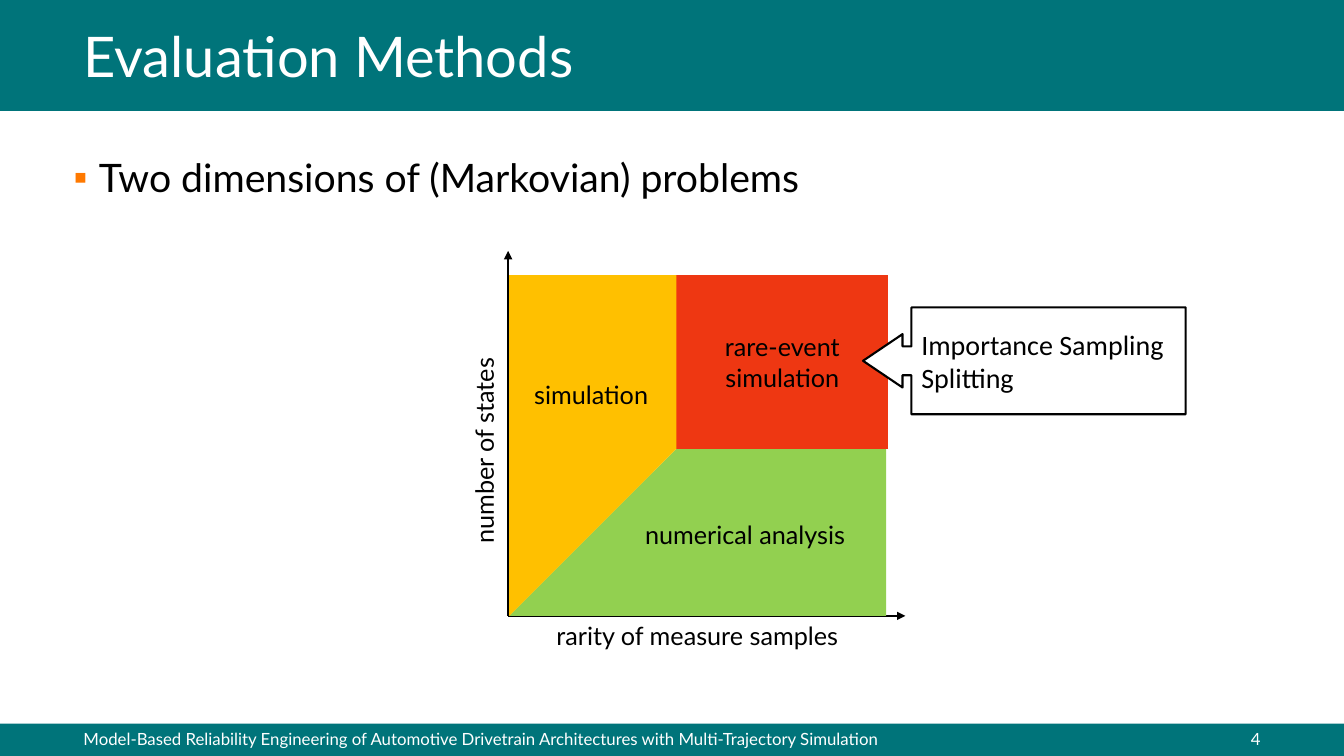
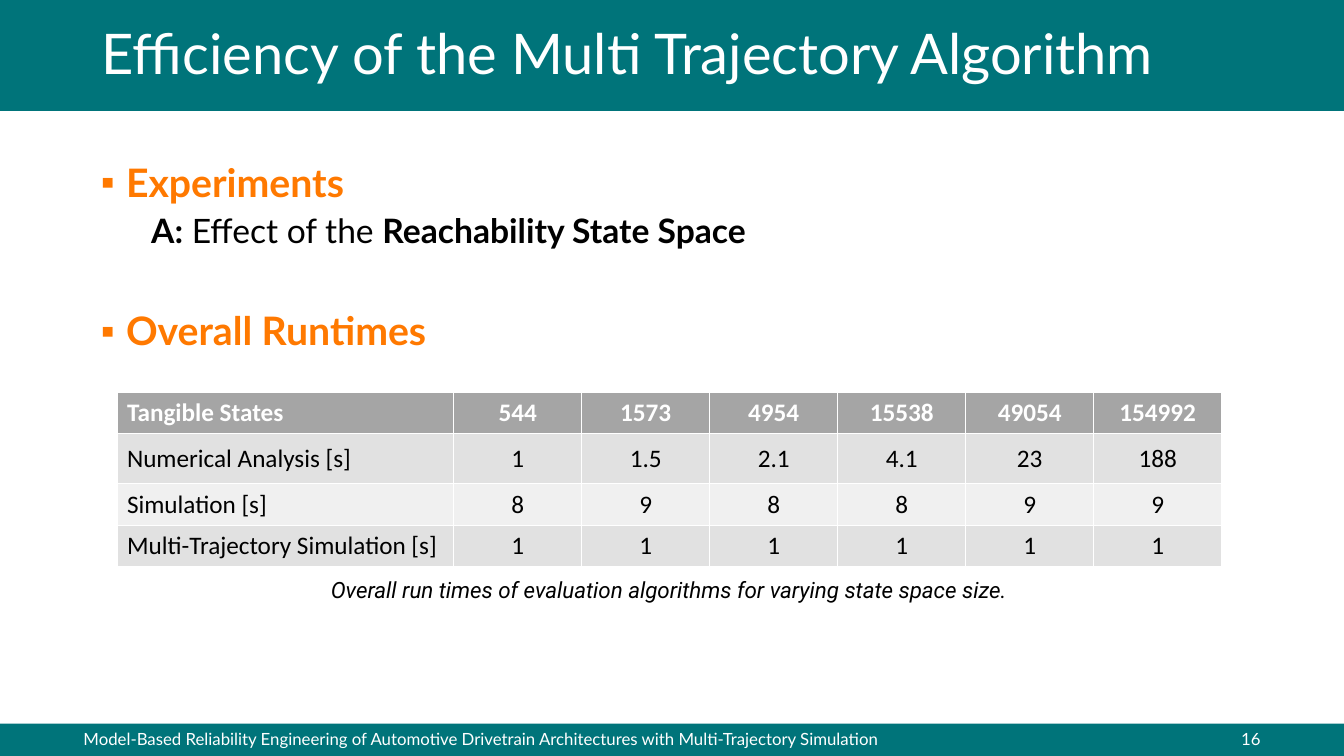
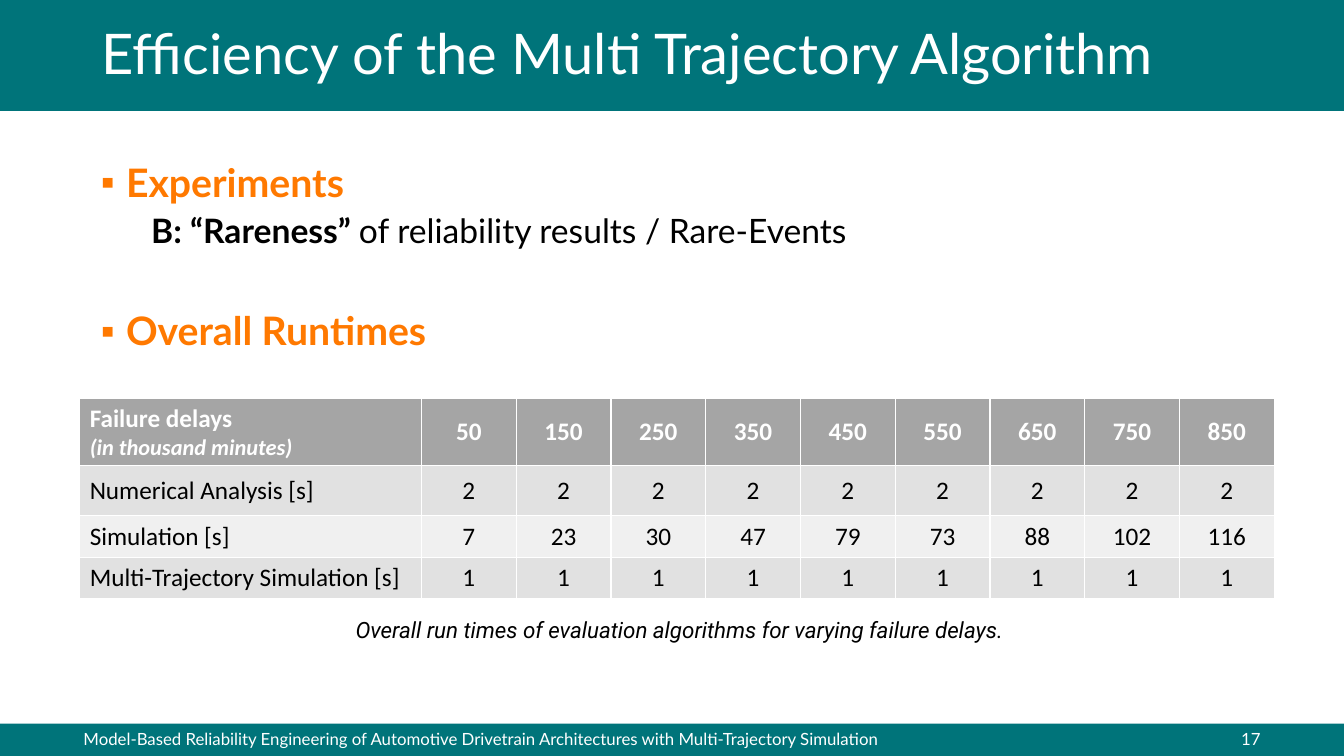
"""Build three slides on evaluation methods and run times of multi-trajectory simulation."""
from lxml import etree
from pptx import Presentation
from pptx import util as u
from pptx.dml.color import RGBColor
from pptx.enum import shapes, text
from pptx.oxml.ns import qn

PX = 9144
WIDTH, HEIGHT = 1333, 750
COLORS = {
    "teal": "00747A", "orange": "FF7900", "white": "FFFFFF", "black": "000000",
    "green": "92D050", "red": "EE3712", "yellow": "FFC000",
    "header": "A5A5A5", "band": "E1E1E1", "light": "F0F0F0",
}
FOOTER = ("Model-Based Reliability Engineering of Automotive Drivetrain Architectures "
          "with Multi-Trajectory Simulation")

BULLET = {"size": 28, "before": 12, "spacing": 0.9, "bullet": "▪", "left": 25, "hang": -25}
HEADING = {**BULLET, "color": "orange", "bold": True}
SUBLINE = {"size": 24, "before": 6, "spacing": 0.9, "level": 1, "left": 50}
BOLD = {"bold": True}

ORIGIN, TOP, RIGHT, MIDDLE = (505, 611), 273, 881, (671, 445)
AXES = [(504, 249), (898, 611)]
REGIONS = [
    ("green", [ORIGIN, MIDDLE, (879, MIDDLE[1]), (879, ORIGIN[1])]),
    ("red", [MIDDLE, (MIDDLE[0], TOP), (RIGHT, TOP), (RIGHT, MIDDLE[1])]),
    ("yellow", [ORIGIN, (ORIGIN[0], TOP), (MIDDLE[0], TOP), MIDDLE]),
]
LABELS = [
    (["rarity of measure samples"], (542, 611, 312, 40), {}),
    (["number of states"], (373, 422, 214, 40), {"rotation": 270}),
    (["numerical analysis"], (630, 510, 227, 40), {}),
    (["rare-event", "simulation"], (706, 324, 140, 71), {"align": "CENTER"}),
    (["simulation"], (520, 371, 139, 40), {}),
]
CALLOUT = ["Importance Sampling", "Splitting"]
CALLOUT_SHAPE = (0.27, 0.25, 0.37, 0.85)

RUNTIME_TITLE = "Efficiency of the Multi Trajectory Algorithm"
RUNTIMES = [
    {
        "number": 16,
        "experiment": [("A:", BOLD), " Effect of the ", ("Reachability State Space", BOLD)],
        "place": (116, 389), "columns": (334, 127), "rows": (41, 50, 41, 41),
        "table": [
            (["Tangible States"], 544, 1573, 4954, 15538, 49054, 154992),
            (["Numerical Analysis [s]"], 1, 1.5, 2.1, 4.1, 23, 188),
            (["Simulation [s]"], 8, 9, 8, 8, 9, 9),
            (["Multi-Trajectory Simulation [s]"], 1, 1, 1, 1, 1, 1),
        ],
        "caption": "Overall run times of evaluation algorithms for varying state space size.",
        "caption_at": (116, 567, 1095, 37),
    },
    {
        "number": 17,
        "experiment": [("B: “Rareness” ", BOLD), "of reliability results / Rare-Events"],
        "place": (79, 395), "columns": (339, 94), "rows": (66, 50, 41, 41),
        "table": [
            (["Failure delays", {"spans": ["(in thousand minutes)"], "size": 16, "italic": True}],
             50, 150, 250, 350, 450, 550, 650, 750, 850),
            (["Numerical Analysis [s]"], 2, 2, 2, 2, 2, 2, 2, 2, 2),
            (["Simulation [s]"], 7, 23, 30, 47, 79, 73, 88, 102, 116),
            (["Multi-Trajectory Simulation [s]"], 1, 1, 1, 1, 1, 1, 1, 1, 1),
        ],
        "caption": "Overall run times of evaluation algorithms for varying failure delays.",
        "caption_at": (83, 606, 1182, 37),
    },
]


def emu(lengths):
    return [u.Emu(length * PX) for length in lengths]


def rgb(name):
    return RGBColor.from_string(COLORS[name])


def write(frame, paras, **look):
    for index, item in enumerate(paras):
        item = item if isinstance(item, dict) else {"spans": [item]}
        style = {"size": 18, "font": "Lato", "color": "black", "align": "LEFT", **look, **item}
        para = frame.paragraphs[0] if index == 0 else frame.add_paragraph()
        para.alignment = text.PP_ALIGN[style["align"]]
        para.level = style.get("level", 0)
        para.line_spacing = style.get("spacing", 1.0)
        para.space_before = u.Pt(style.get("before", 0))
        set_bullet(para, style)
        for part in style["spans"]:
            words, extra = (part, {}) if isinstance(part, str) else part
            span = para.add_run()
            span.text = words
            font = {**style, **extra}
            span.font.name = font["font"]
            span.font.size = u.Pt(font["size"])
            span.font.bold = font.get("bold", False)
            span.font.italic = font.get("italic", False)
            span.font.color.rgb = rgb(font["color"])


def set_bullet(para, style):
    props = para._p.get_or_add_pPr()
    props.set("marL", str(style.get("left", 0) * PX))
    props.set("indent", str(style.get("hang", 0) * PX))
    if "bullet" in style:
        tint = etree.SubElement(props, qn("a:buClr"))
        etree.SubElement(tint, qn("a:srgbClr"), val=COLORS["orange"])
        etree.SubElement(props, qn("a:buChar"), char=style["bullet"])
    else:
        etree.SubElement(props, qn("a:buNone"))


def add_text(page, paras, place, wrap=True, rotation=0, **look):
    box = page.shapes.add_textbox(*emu(place))
    box.rotation = rotation
    box.text_frame.word_wrap = wrap
    if not wrap:
        box.text_frame.auto_size = text.MSO_AUTO_SIZE.SHAPE_TO_FIT_TEXT
    write(box.text_frame, paras, **look)
    return box


def paint(shape, fill, line=None):
    shape.shadow.inherit = False
    shape.fill.solid()
    shape.fill.fore_color.rgb = rgb(fill)
    if line:
        shape.line.color.rgb = rgb(line)
        shape.line.width = u.Pt(1.5)
    else:
        shape.line.fill.background()
    return shape


def fill_placeholder(holder, place, paras, anchor, **look):
    holder.left, holder.top, holder.width, holder.height = emu(place)
    holder.text_frame.auto_size = text.MSO_AUTO_SIZE.NONE
    holder.text_frame.vertical_anchor = anchor
    write(holder.text_frame, paras, **look)


def add_page(deck, number, title, title_at, body, body_at):
    page = deck.slides.add_slide(deck.slide_layouts[1])
    anchors = text.MSO_ANCHOR
    fill_placeholder(page.shapes.title, (*title_at, 1188, 82), [title], anchors.BOTTOM,
                     size=40, color="white", spacing=0.9)
    fill_placeholder(page.placeholders[1], body_at, body, anchors.TOP)
    add_text(page, [str(number)], (802, 718, 458, 40), size=12, color="white", align="RIGHT")
    return page


def dress_layout(page):
    layout = page.slide_layout
    for holder in list(layout.placeholders)[2:]:
        holder.element.getparent().remove(holder.element)
    parts = [
        paint(page.shapes.add_shape(shapes.MSO_SHAPE.RECTANGLE, *emu(place)), "teal")
        for place in [(0, 0, WIDTH, 110), (0, 718, WIDTH, HEIGHT - 718)]
    ]
    parts.append(add_text(page, [FOOTER], (73, 718, 864, 40), size=12, color="white"))
    for index, part in enumerate(parts):
        layout.shapes.element.insert(2 + index, part.element)


def add_axis(page, end):
    start = (AXES[0][0], AXES[1][1])
    axis = page.shapes.add_connector(shapes.MSO_CONNECTOR.STRAIGHT, *emu(start + end))
    axis.line.color.rgb = rgb("black")
    axis.line.width = u.Pt(1.5)
    etree.SubElement(axis.line._get_or_add_ln(), qn("a:tailEnd"), type="triangle")
    etree.SubElement(axis.element.spPr, qn("a:effectLst"))


def draw_methods(page):
    for end in AXES:
        add_axis(page, end)
    for fill, points in REGIONS:
        outline = page.shapes.build_freeform(*points[0], scale=PX)
        outline.add_line_segments(points[1:], close=True)
        paint(outline.convert_to_shape(), fill)
    for paras, place, look in LABELS:
        add_text(page, paras, place, wrap=False, **look)
    callout = page.shapes.add_shape(shapes.MSO_SHAPE.LEFT_ARROW_CALLOUT,
                                    *emu((856, 305, 320, 106)))
    for index, value in enumerate(CALLOUT_SHAPE):
        callout.adjustments[index] = value
    paint(callout, "white", "black")
    callout.text_frame.vertical_anchor = text.MSO_ANCHOR.MIDDLE
    write(callout.text_frame, CALLOUT, size=20, font="Calibri")


def draw_table(page, data):
    rows = data["table"]
    first, other = data["columns"]
    widths = [first] + [other] * (len(rows[0]) - 1)
    size = (sum(widths), sum(data["rows"]))
    table = page.shapes.add_table(len(rows), len(widths), *emu(data["place"] + size)).table
    for column, width in zip(table.columns, widths):
        column.width = u.Emu(width * PX)
    for r, (values, height) in enumerate(zip(rows, data["rows"])):
        table.rows[r].height = u.Emu(height * PX)
        fill = "header" if r == 0 else ("light", "band")[r % 2]
        for c, value in enumerate(values):
            cell = table.cell(r, c)
            cell.fill.solid()
            cell.fill.fore_color.rgb = rgb(fill)
            cell.vertical_anchor = text.MSO_ANCHOR.MIDDLE
            write(cell.text_frame, value if c == 0 else [str(value)], font="Calibri",
                  bold=r == 0, color="black" if r else "white",
                  align="CENTER" if c else "LEFT")


def main():
    deck = Presentation()
    deck.slide_width, deck.slide_height = emu((WIDTH, HEIGHT))
    problems = [{"spans": ["Two dimensions of (Markovian) problems"], **BULLET}]
    page = add_page(deck, 4, "Evaluation Methods", (73, 12), problems, (63, 152, 1198, 90))
    dress_layout(page)
    draw_methods(page)
    for data in RUNTIMES:
        body = [
            {"spans": ["Experiments"], **HEADING},
            {"spans": data["experiment"], **SUBLINE},
            {"spans": ["Overall Runtimes"], **HEADING, "before": 44},
        ]
        page = add_page(deck, data["number"], RUNTIME_TITLE, (91, 9), body, (90, 157, 1182, 220))
        draw_table(page, data)
        add_text(page, [data["caption"]], data["caption_at"], size=16, font="Roboto",
                 italic=True, align="CENTER")
    deck.save("out.pptx")


if __name__ == "__main__":
    main()
